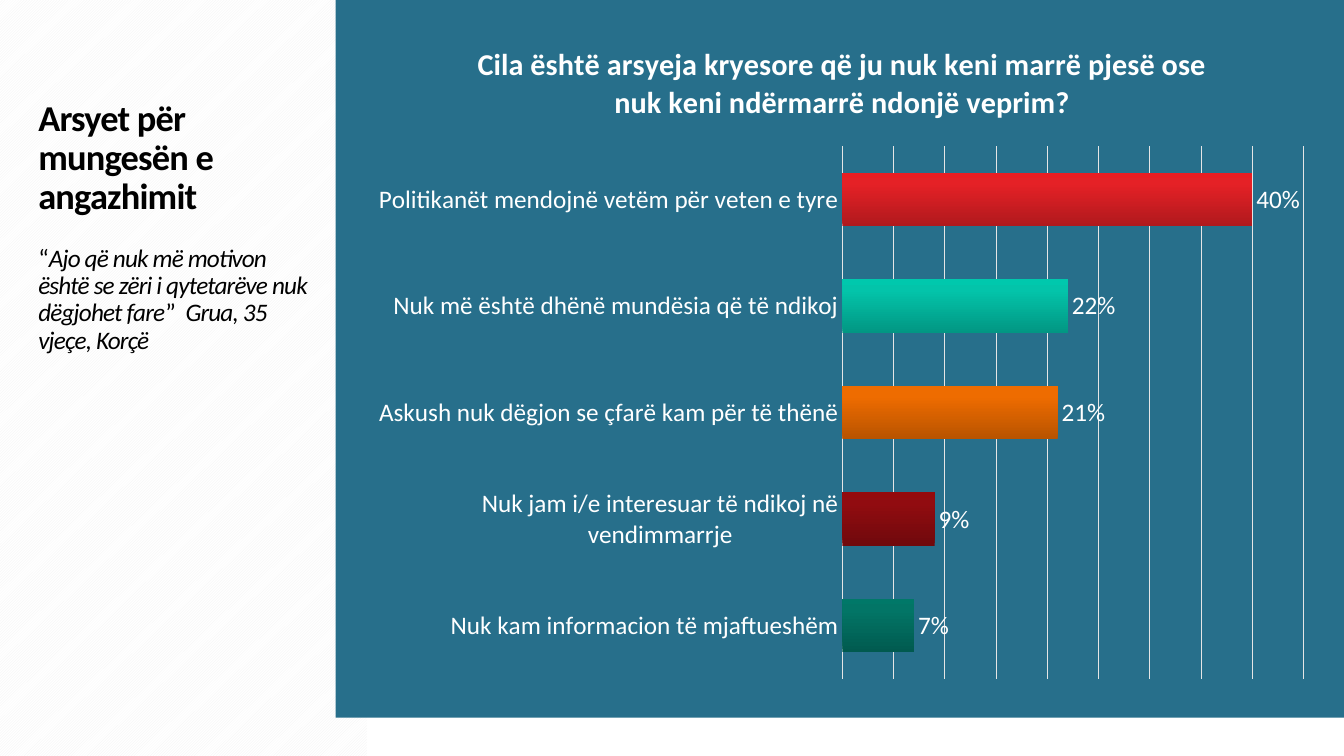
import copy
import pptx
import pptx.chart.data
import pptx.dml.color
import pptx.enum.chart
import pptx.enum.dml
import pptx.enum.shapes
import pptx.enum.text
import pptx.oxml
import pptx.util

Inches = pptx.util.Inches
Pt = pptx.util.Pt
RGB = pptx.dml.color.RGBColor
WHITE = RGB(0xFF, 0xFF, 0xFF)
BLACK = RGB(0x00, 0x00, 0x00)
PALE = RGB(0xF2, 0xF2, 0xF2)
GRID = RGB(0xE5, 0xE5, 0xE5)
BLUE = RGB(0x27, 0x6F, 0x8B)

# Answers: label, share, bar shades from bottom to top
ANSWERS = [
    ("Politikanët mendojnë vetëm për veten e tyre", 0.40, ("B0191D", "E52126", "EA1D22")),
    ("Nuk më është dhënë mundësia që të ndikoj", 0.22, ("029783", "03C4AA", "00C8AD")),
    ("Askush nuk dëgjon se çfarë kam për të thënë", 0.21, ("B85300", "EE6C00", "EF6C00")),
    ("Nuk jam i/e interesuar të ndikoj në vendimmarrje", 0.09, ("70090C", "910C10", "940A0D")),
    ("Nuk kam informacion të mjaftueshëm", 0.07, ("015A4F", "027566", "007868")),
]


def style(obj, **values):
    for name, value in values.items():
        setattr(obj, name, value)


def paint(font, size, color, **more):
    style(font, name="Calibri", size=Pt(size), **more)
    font.color.rgb = color


deck = pptx.Presentation()
style(deck, slide_width=Inches(13.33), slide_height=Inches(7.5))
slide = deck.slides.add_slide(deck.slide_layouts[5])
shapes = slide.shapes

# Striped side band and blue panel
RECT = pptx.enum.shapes.MSO_SHAPE.RECTANGLE
band = shapes.add_shape(RECT, Inches(-1.93), Inches(1.93), Inches(7.5), Inches(3.64))
band.rotation = 270
band.fill.patterned()
band.fill.pattern = pptx.enum.dml.MSO_PATTERN.DARK_UPWARD_DIAGONAL
band.fill.fore_color.rgb = PALE
band.fill.back_color.rgb = WHITE
panel = shapes.add_shape(RECT, Inches(3.33), Inches(-0.07), Inches(10.21), Inches(7.19))
panel.fill.solid()
panel.fill.fore_color.rgb = BLUE
for shape in (band, panel):
    shape.shadow.inherit = False
    shape.line.fill.background()

# Title with quote, in front of the band
title = shapes.title
band.element.getparent().append(title.element)
style(title, left=Inches(0.28), top=Inches(0.94), width=Inches(2.88), height=Inches(5.21))
frame = title.text_frame
style(frame, word_wrap=True, vertical_anchor=pptx.enum.text.MSO_ANCHOR.TOP,
      auto_size=pptx.enum.text.MSO_AUTO_SIZE.NONE)
HEAD = [("Arsyet për mungesën e angazhimit", False)]
QUOTE = [
    ("“", False),
    ("Ajo që nuk më motivon është se zëri i qytetarëve nuk dëgjohet fare", True),
    ("”  ", False),
    ("Grua, 35 vjeçe, Korçë", True),
]
for para, parts, size, bold, gap in (
    (frame.paragraphs[0], HEAD, 26, True, 0),
    (frame.add_paragraph(), QUOTE, 18, False, 20),
):
    style(para, alignment=pptx.enum.text.PP_ALIGN.LEFT, line_spacing=0.9, space_before=Pt(gap))
    for text, slant in parts:
        run = para.add_run()
        run.text = text
        paint(run.font, size, BLACK, bold=bold, italic=slant)
        run._r.get_or_add_rPr().set("spc", "-60")

# Bar chart
data = pptx.chart.data.CategoryChartData(number_format="0%")
data.categories = [label for label, share, shades in ANSWERS]
data.add_series("Series 1", [share for label, share, shades in ANSWERS])
chart = shapes.add_chart(pptx.enum.chart.XL_CHART_TYPE.BAR_CLUSTERED, Inches(3.59), Inches(0.18),
                         Inches(9.53), Inches(6.69), data).chart
style(chart, has_legend=False, has_title=True)
paint(chart.font, 18, WHITE)
head = chart.chart_title.text_frame.paragraphs[0].add_run()
head.text = "Cila është arsyeja kryesore që ju nuk keni marrë pjesë ose nuk keni ndërmarrë ndonjë veprim?"
paint(head.font, 21.6, WHITE, bold=True)
chart.chart_title.include_in_layout = False

# Axes
TICK = pptx.enum.chart.XL_TICK_MARK.NONE
cat = chart.category_axis
style(cat, reverse_order=True, major_tick_mark=TICK, minor_tick_mark=TICK)
paint(cat.tick_labels.font, 18, WHITE)
val = chart.value_axis
style(val, minimum_scale=0, maximum_scale=0.45, major_unit=0.05,
      has_major_gridlines=True, visible=False)
for line in (cat.format.line, val.major_gridlines.format.line):
    line.width = Pt(0.75)
    line.color.rgb = GRID

# Bars and value labels
plot = chart.plots[0]
style(plot, gap_width=100, vary_by_categories=False, has_data_labels=True)
style(plot.data_labels, show_value=True, number_format="0%", number_format_is_linked=False,
      position=pptx.enum.chart.XL_LABEL_POSITION.OUTSIDE_END)
paint(plot.data_labels.font, 18, WHITE)
for i, (label, share, shades) in enumerate(ANSWERS):
    fill = plot.series[0].points[i].format.fill
    fill.gradient()
    fill.gradient_angle = 90
    first = fill.gradient_stops[0]._gs
    first.addnext(copy.deepcopy(first))
    for stop, place, shade in zip(fill.gradient_stops, (0, 0.8, 1), shades):
        stop.position = place
        stop.color.rgb = RGB.from_string(shade)

# Plot area inside the chart frame
space = "http://schemas.openxmlformats.org/drawingml/2006/chart"
area = chart.element.find(".//{%s}plotArea" % space)
for old in area.findall("{%s}layout" % space):
    area.remove(old)
area.insert(0, pptx.oxml.parse_xml(
    f'<c:layout xmlns:c="{space}"><c:manualLayout><c:layoutTarget val="inner"/>'
    '<c:xMode val="edge"/><c:yMode val="edge"/><c:x val="0.5"/><c:y val="0.19"/>'
    '<c:w val="0.48"/><c:h val="0.79"/></c:manualLayout></c:layout>'))

deck.save("out.pptx")
